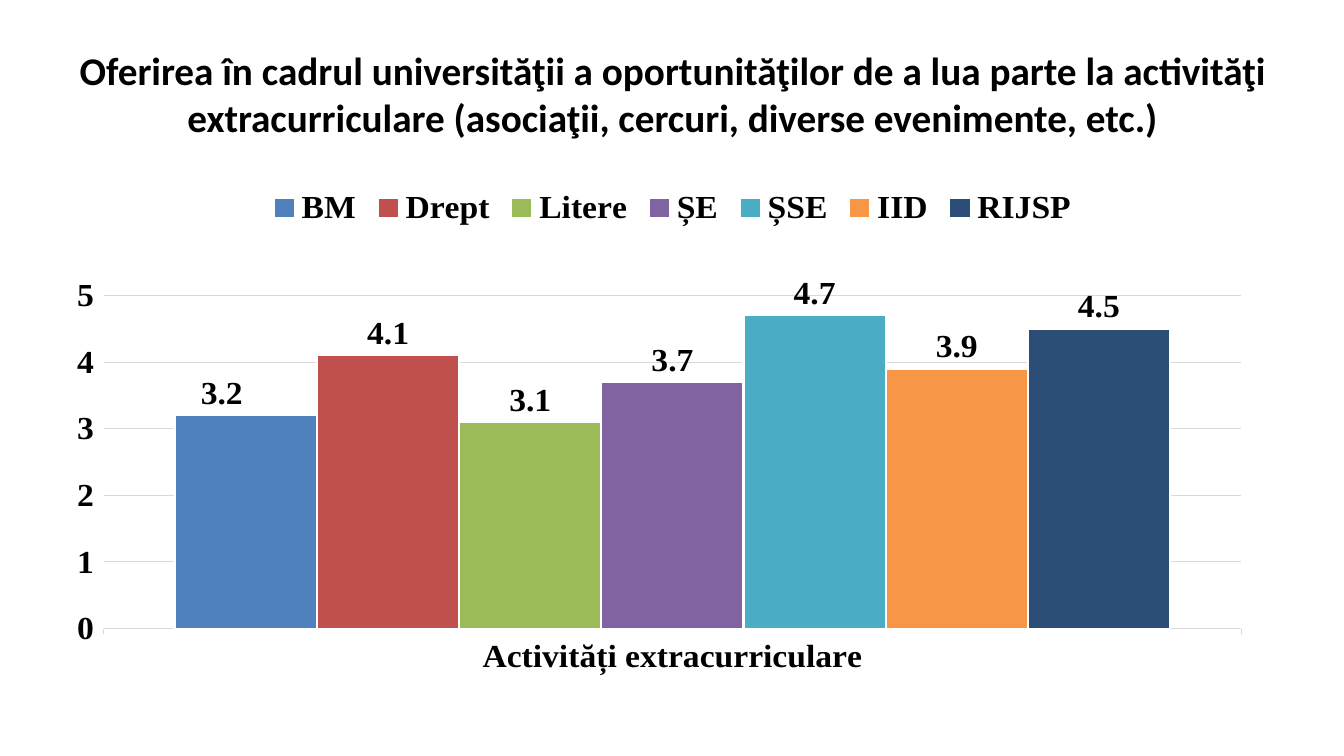
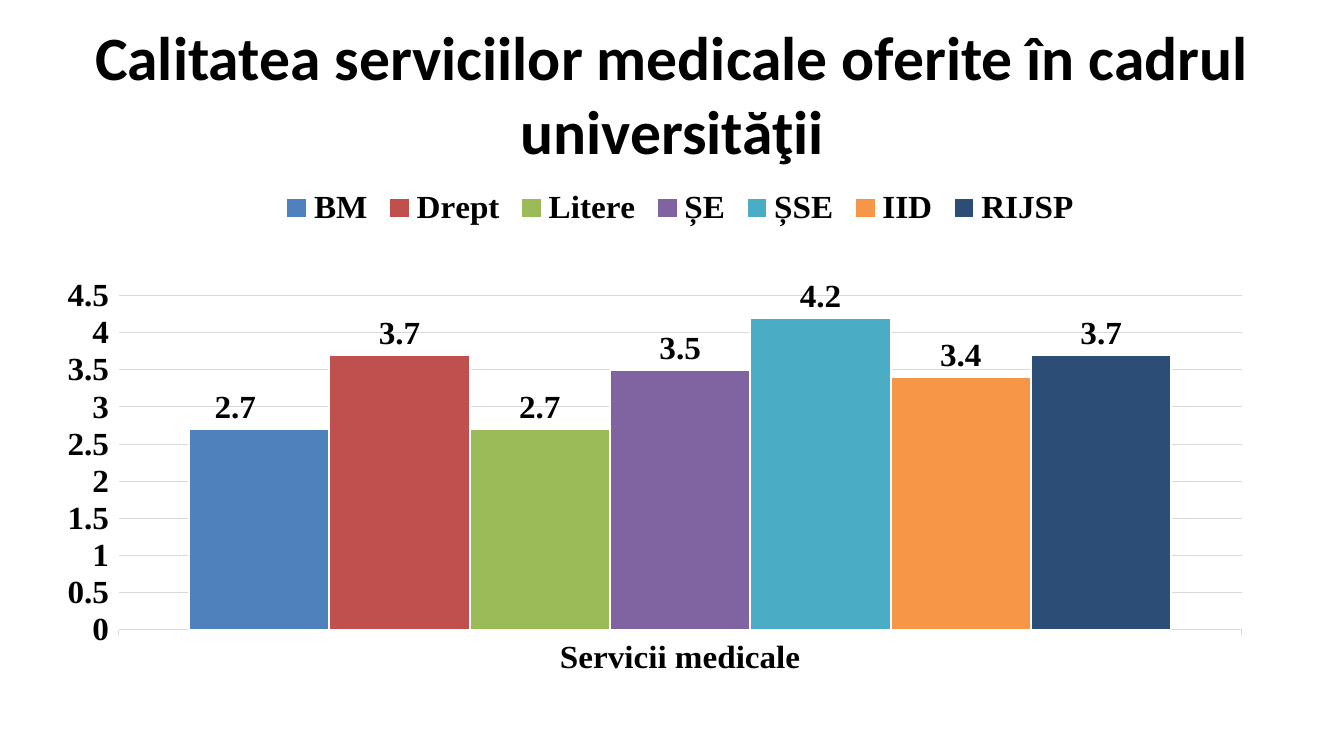
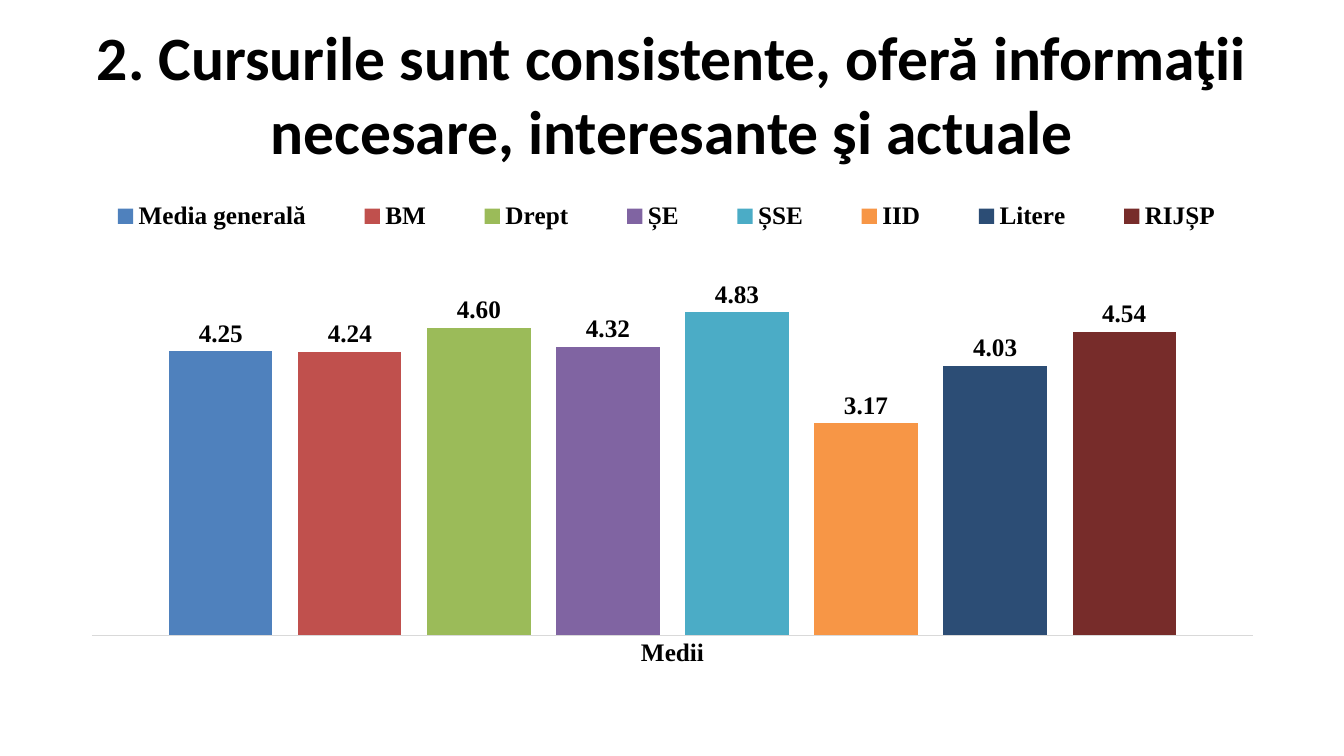
from pptx import Presentation
from pptx.chart.data import CategoryChartData
from pptx.dml.color import RGBColor
from pptx.enum.chart import XL_CHART_TYPE, XL_LABEL_POSITION, XL_LEGEND_POSITION, XL_TICK_MARK
from pptx.enum.text import MSO_ANCHOR, PP_ALIGN
from pptx.oxml import parse_xml
from pptx.oxml.ns import nsdecls
from pptx.util import Inches, Pt

HUES = {
    "text": "000000", "grid": "D9D9D9", "edge": "FFFFFF",
    "blue": "4F81BD", "red": "C0504D", "green": "9BBB59", "purple": "8064A2",
    "teal": "4BACC6", "orange": "F79646", "navy": "2C4D75", "wine": "772C2A",
}
BARS = ["blue", "red", "green", "purple", "teal", "orange", "navy", "wine"]
UNITS = ["BM", "Drept", "Litere", "ȘE", "ȘSE", "IID", "RIJSP"]
SLIDES = [
    {
        "title": "Oferirea în cadrul universităţii a oportunităţilor de a lua parte la activităţi "
                 "extracurriculare (asociaţii, cercuri, diverse evenimente, etc.)",
        "size": 28, "group": "Activități extracurriculare", "names": UNITS,
        "vals": [3.2, 4.1, 3.1, 3.7, 4.7, 3.9, 4.5], "top": 5, "step": 1, "means": False,
    },
    {
        "title": "Calitatea serviciilor medicale oferite în cadrul universităţii",
        "size": 44, "group": "Servicii medicale", "names": UNITS,
        "vals": [2.7, 3.7, 2.7, 3.5, 4.2, 3.4, 3.7], "top": 4.5, "step": 0.5, "means": False,
    },
    {
        "title": "2. Cursurile sunt consistente, oferă informaţii necesare, interesante şi actuale",
        "size": 44, "group": "Medii",
        "names": ["Media generală", "BM", "Drept", "ȘE", "ȘSE", "IID", "Litere", "RIJȘP"],
        "vals": [4.25, 4.24, 4.6, 4.32, 4.83, 3.17, 4.03, 4.54], "top": 5, "step": 1, "means": True,
    },
]


def style(font, size, name="Times New Roman"):
    font.name = name
    font.size = Pt(size)
    font.bold = True
    font.color.rgb = RGBColor.from_string(HUES["text"])


def place(node, spot, **parts):
    for old in node.xpath("c:layout"):
        node.remove(old)
    tags = "".join(f'<c:{tag} val="{val}"/>' for tag, val in parts.items())
    node.insert(spot, parse_xml(
        f'<c:layout {nsdecls("c")}><c:manualLayout>{tags}</c:manualLayout></c:layout>'))


deck = Presentation()
deck.slide_width = Inches(13.33)
deck.slide_height = Inches(7.5)

for item in SLIDES:
    means = item["means"]
    size = 18 if means else 24
    slide = deck.slides.add_slide(deck.slide_layouts[6])

    frame = slide.shapes.add_textbox(Inches(0.67), Inches(0.3), Inches(12), Inches(1.25)).text_frame
    frame.word_wrap = True
    frame.vertical_anchor = MSO_ANCHOR.MIDDLE
    para = frame.paragraphs[0]
    para.alignment = PP_ALIGN.CENTER
    run = para.add_run()
    run.text = item["title"]
    style(run.font, item["size"], "Calibri")

    data = CategoryChartData()
    data.categories = [item["group"]]
    for name, val in zip(item["names"], item["vals"]):
        data.add_series(name, [val])
    chart = slide.shapes.add_chart(
        XL_CHART_TYPE.COLUMN_CLUSTERED, Inches(0.67), Inches(1.75), Inches(12), Inches(4.95), data).chart
    chart.has_title = False
    style(chart.font, size)
    chart.has_legend = True
    chart.legend.position = XL_LEGEND_POSITION.TOP
    chart.legend.include_in_layout = False
    style(chart.legend.font, size)

    plot = chart.plots[0]
    plot.vary_by_categories = False
    plot.gap_width = 150 if means else 100
    plot.overlap = -25 if means else 0
    for bar, hue in zip(plot.series, BARS):
        bar.format.fill.solid()
        bar.format.fill.fore_color.rgb = RGBColor.from_string(HUES[hue])
        if not means:
            bar.format.line.color.rgb = RGBColor.from_string(HUES["edge"])
            bar.format.line.width = Pt(1.5)
        tags = bar.data_labels
        tags.show_value = True
        tags.position = XL_LABEL_POSITION.OUTSIDE_END
        tags.number_format = "0.00" if means else "General"
        tags.number_format_is_linked = False
        style(tags.font, size)

    base = chart.category_axis
    base.major_tick_mark = XL_TICK_MARK.NONE if means else XL_TICK_MARK.OUTSIDE
    base.format.line.color.rgb = RGBColor.from_string(HUES["grid"])
    base.format.line.width = Pt(0.75)
    style(base.tick_labels.font, size)

    scale = chart.value_axis
    scale.minimum_scale = 0
    scale.maximum_scale = item["top"]
    scale.major_unit = item["step"]
    scale.has_major_gridlines = not means
    scale.visible = not means

    area = chart.element.xpath(".//c:plotArea")[0]
    inner = {"layoutTarget": "inner", "xMode": "edge", "yMode": "edge"}
    if means:
        place(area, 0, **inner, x=0.02, y=0.25, w=0.96, h=0.67)
        legend = chart.element.xpath(".//c:legend")[0]
        place(legend, 1, xMode="edge", yMode="edge", x=0, y=0.04, w=0.99, h=0.08)
    else:
        place(area, 0, **inner, x=0.03, y=0.25, w=0.94, h=0.7)
        scale.format.line.fill.background()
        grid = scale.major_gridlines.format.line
        grid.color.rgb = RGBColor.from_string(HUES["grid"])
        grid.width = Pt(0.75)
        style(scale.tick_labels.font, size)
        first = plot.series[0].points[0].data_label
        style(first.font, size)
        first.position = XL_LABEL_POSITION.OUTSIDE_END
        place(chart.element.xpath(".//c:dLbl")[0], 1, x=-0.02, y=0)

deck.save("out.pptx")
